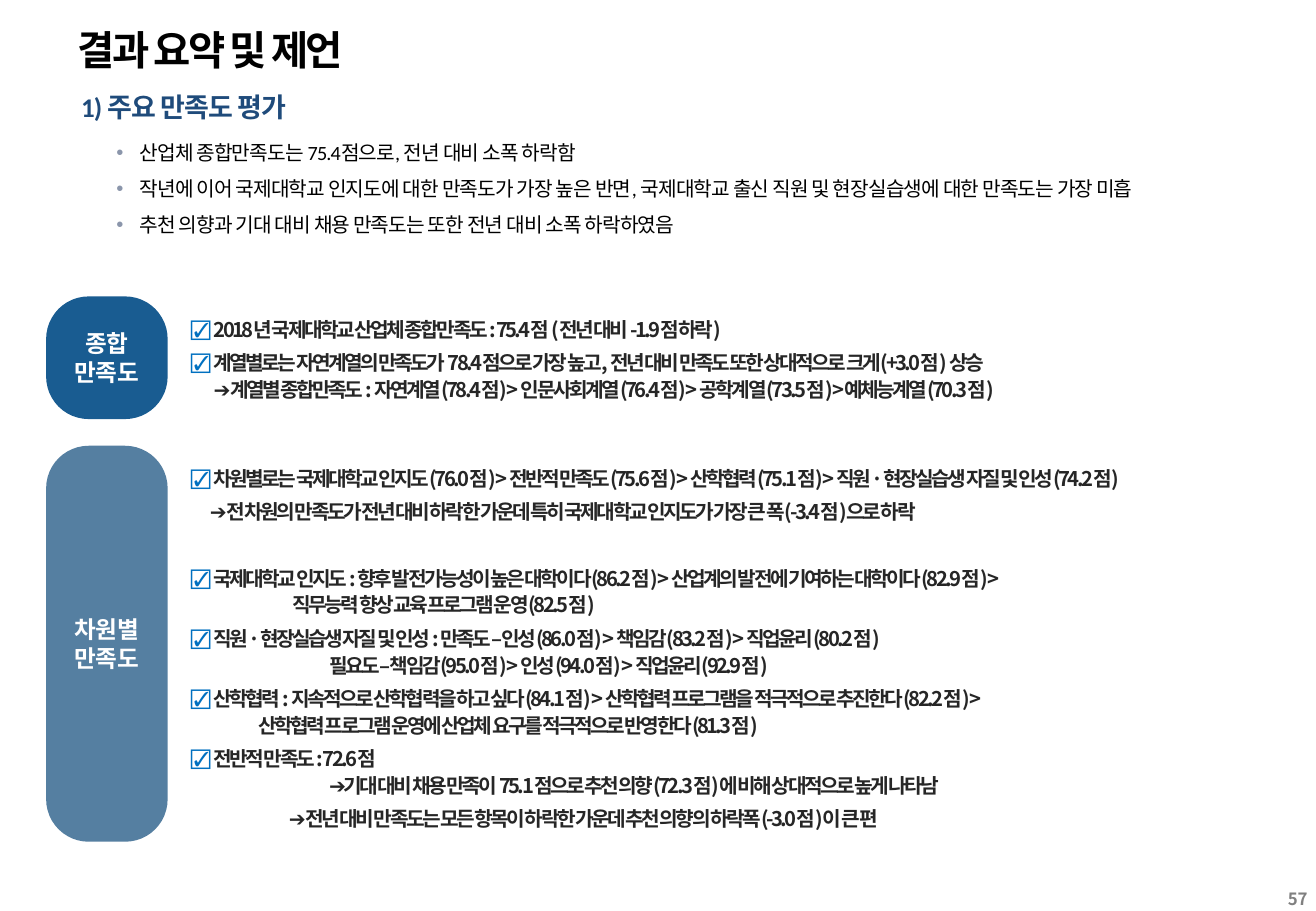
from dataclasses import dataclass

from lxml import etree
from pptx import Presentation
from pptx.dml.color import RGBColor
from pptx.enum.shapes import MSO_SHAPE
from pptx.enum.text import MSO_ANCHOR, PP_ALIGN
from pptx.oxml.ns import qn
from pptx.util import Inches, Pt

ROUNDED = MSO_SHAPE.ROUNDED_RECTANGLE
TOP, MIDDLE = MSO_ANCHOR.TOP, MSO_ANCHOR.MIDDLE
LEFT, CENTER, RIGHT = PP_ALIGN.LEFT, PP_ALIGN.CENTER, PP_ALIGN.RIGHT


@dataclass(frozen=True)
class Style:
    """Font, size, colour, weight and tracking of a text."""
    font: str
    size: float
    color: str
    bold: bool = False
    tracking: float = 0


@dataclass(frozen=True)
class Theme:
    """Colours and type of the slide."""
    title: Style = Style("Calibri", 24, "000000", True, -1.5)
    subtitle: Style = Style("Calibri", 16, "1F4B7B", True, -0.5)
    summary: Style = Style("Calibri", 12, "000000", False, -0.5)
    finding: Style = Style("Noto Sans CJK KR", 12, "262626", True, -1.5)
    label: Style = Style("Cabin", 14, "FFFFFF", True)
    page: Style = Style("Noto Sans CJK KR", 10, "808080", True)
    dot: str = "8B96AB"
    check: str = "0070C0"
    overall: str = "195C91"
    dimension: str = "557FA1"


THEME = Theme()
HANG = 0.19
CHECKED = None

SUMMARY = [
    "산업체 종합만족도는 75.4점으로, 전년 대비 소폭 하락함",
    "작년에 이어 국제대학교 인지도에 대한 만족도가 가장 높은 반면, 국제대학교 출신 직원 및 현장실습생에 대한 만족도는 가장 미흡",
    "추천 의향과 기대 대비 채용 만족도는 또한 전년 대비 소폭 하락하였음",
]
OVERALL = [
    ("2018년 국제대학교 산업체 종합만족도 : 75.4점 (전년 대비 -1.9점 하락)", CHECKED, 0),
    ("계열별로는 자연계열의 만족도가 78.4점으로 가장 높고, 전년 대비 만족도 또한 상대적으로 크게(+3.0점) 상승", CHECKED, 4),
    ("➔ 계열별 종합만족도 : 자연계열(78.4점) > 인문사회계열(76.4점) > 공학계열(73.5점) >예체능계열(70.3점)", 0.19, 0),
]
DIMENSION = [
    ("차원별로는 국제대학교 인지도(76.0점) > 전반적 만족도(75.6점) > 산학협력(75.1점) > 직원·현장실습생 자질 및 인성(74.2점)", CHECKED, 0),
    ("➔ 전 차원의 만족도가 전년 대비 하락한 가운데 특히 국제대학교 인지도가 가장 큰 폭(-3.4점)으로 하락", 0.16, 4),
    ("국제대학교 인지도 : 향후 발전가능성이 높은 대학이다(86.2점) > 산업계의 발전에 기여하는 대학이다(82.9점) >", CHECKED, 23.5),
    ("직무능력 향상 교육 프로그램 운영(82.5점)", 0.84, 0),
    ("직원·현장실습생 자질 및 인성 : 만족도 – 인성(86.0점) > 책임감(83.2점) > 직업윤리(80.2점)", CHECKED, 4),
    ("필요도 – 책임감(95.0점) > 인성(94.0점) > 직업윤리(92.9점)", 1.14, 0),
    ("산학협력 : 지속적으로 산학협력을 하고 싶다(84.1점) > 산학협력 프로그램을 적극적으로 추진한다(82.2점) >", CHECKED, 4),
    ("산학협력 프로그램 운영에 산업체 요구를 적극적으로 반영한다(81.3점)", 0.56, 0),
    ("전반적 만족도 : 72.6점", CHECKED, 4),
    ("➔기대 대비 채용 만족이 75.1점으로 추천 의향(72.3점)에 비해 상대적으로 높게 나타남", 1.14, 0),
    ("➔ 전년 대비 만족도는 모든 항목이 하락한 가운데 추천 의향의 하락폭(-3.0점)이 큰 편", 0.81, 4),
]


def add_box(slide, box, anchor=TOP, wrap=True):
    """Add a text box and return its text frame."""
    tf = slide.shapes.add_textbox(*map(Inches, box)).text_frame
    tf.word_wrap, tf.vertical_anchor = wrap, anchor
    return tf


def next_paragraph(tf):
    """Return the first paragraph while it is empty, else a new one."""
    first = tf.paragraphs[0]
    return tf.add_paragraph() if first.runs else first


def add_text(tf, text, style, align=LEFT, line=1.0, before=0, after=0):
    """Write one styled paragraph and return it."""
    p = next_paragraph(tf)
    p.alignment, p.line_spacing = align, line
    p.space_before, p.space_after = Pt(before), Pt(after)
    r = p.add_run()
    r.text = text
    r.font.name, r.font.size, r.font.bold = style.font, Pt(style.size), style.bold
    r.font.color.rgb = RGBColor.from_string(style.color)
    if style.tracking:
        r._r.get_or_add_rPr().set("spc", str(int(style.tracking * 100)))
    return p


def set_indent(p, left, bullet=None, color=None):
    """Indent a paragraph and hang a coloured bullet in front of it."""
    pPr = p._p.get_or_add_pPr()
    pPr.set("marL", str(Inches(left)))
    pPr.set("indent", str(-Inches(left) if bullet else 0))
    if bullet:
        clr = etree.SubElement(pPr, qn("a:buClr"))
        etree.SubElement(clr, qn("a:srgbClr")).set("val", color)
        etree.SubElement(pPr, qn("a:buFont")).set("typeface", "Arial")
        etree.SubElement(pPr, qn("a:buChar")).set("char", bullet)


def add_heading(slide, box):
    """Place the title, the subtitle and the summary bullets."""
    x, y, w, h = box
    add_text(add_box(slide, (x, y, 3.65, 0.5), MIDDLE, False),
             "결과 요약 및 제언", THEME.title)
    add_text(add_box(slide, (x + 0.03, y + 0.5, 7.58, 0.39), MIDDLE, False),
             "1) 주요 만족도 평가", THEME.subtitle, line=1.2, after=1.5)
    tf = add_box(slide, (x + 0.32, y + 0.91, w - 0.32, h - 0.91))
    for text in SUMMARY:
        p = add_text(tf, text, THEME.summary, line=1.2, after=4)
        set_indent(p, HANG, "•", THEME.dot)


def add_section(slide, box, labels, color, findings, drop):
    """Place a rounded label and its checked findings beside it."""
    x, y, w, h = box
    sp = slide.shapes.add_shape(ROUNDED, *map(Inches, (x, y, 1, h)))
    sp.shadow.inherit = False
    sp.adjustments[0] = 0.35
    sp.fill.solid()
    sp.fill.fore_color.rgb = RGBColor.from_string(color)
    sp.line.fill.background()
    sp.text_frame.vertical_anchor = MIDDLE
    for label in labels:
        add_text(sp.text_frame, label, THEME.label, CENTER)
    tf = add_box(slide, (x + 1.09, y + drop, w - 1.09, h - drop))
    for text, indent, before in findings:
        p = add_text(tf, text, THEME.finding, line=1.1, before=before)
        if indent is CHECKED:
            set_indent(p, HANG, "☑", THEME.check)
        else:
            set_indent(p, indent)


def add_page_number(slide, box):
    """Place the page number."""
    tf = add_box(slide, box, MIDDLE, False)
    tf.margin_top = tf.margin_bottom = 0
    add_text(tf, "57", THEME.page, RIGHT)


def main():
    """Build and save the slide."""
    prs = Presentation()
    prs.slide_width, prs.slide_height = Inches(10.83), Inches(7.5)
    slide = prs.slides.add_slide(prs.slide_layouts[6])
    add_heading(slide, (0.54, 0.16, 10, 1.95))
    add_section(slide, (0.38, 2.44, 10.45, 1.01), ("종합", "만족도"),
                THEME.overall, OVERALL, 0.1)
    add_section(slide, (0.38, 3.67, 10.45, 3.26), ("차원별", "만족도"),
                THEME.dimension, DIMENSION, 0.1)
    add_page_number(slide, (10.38, 7.29, 0.48, 0.21))
    prs.save("out.pptx")


if __name__ == "__main__":
    main()
